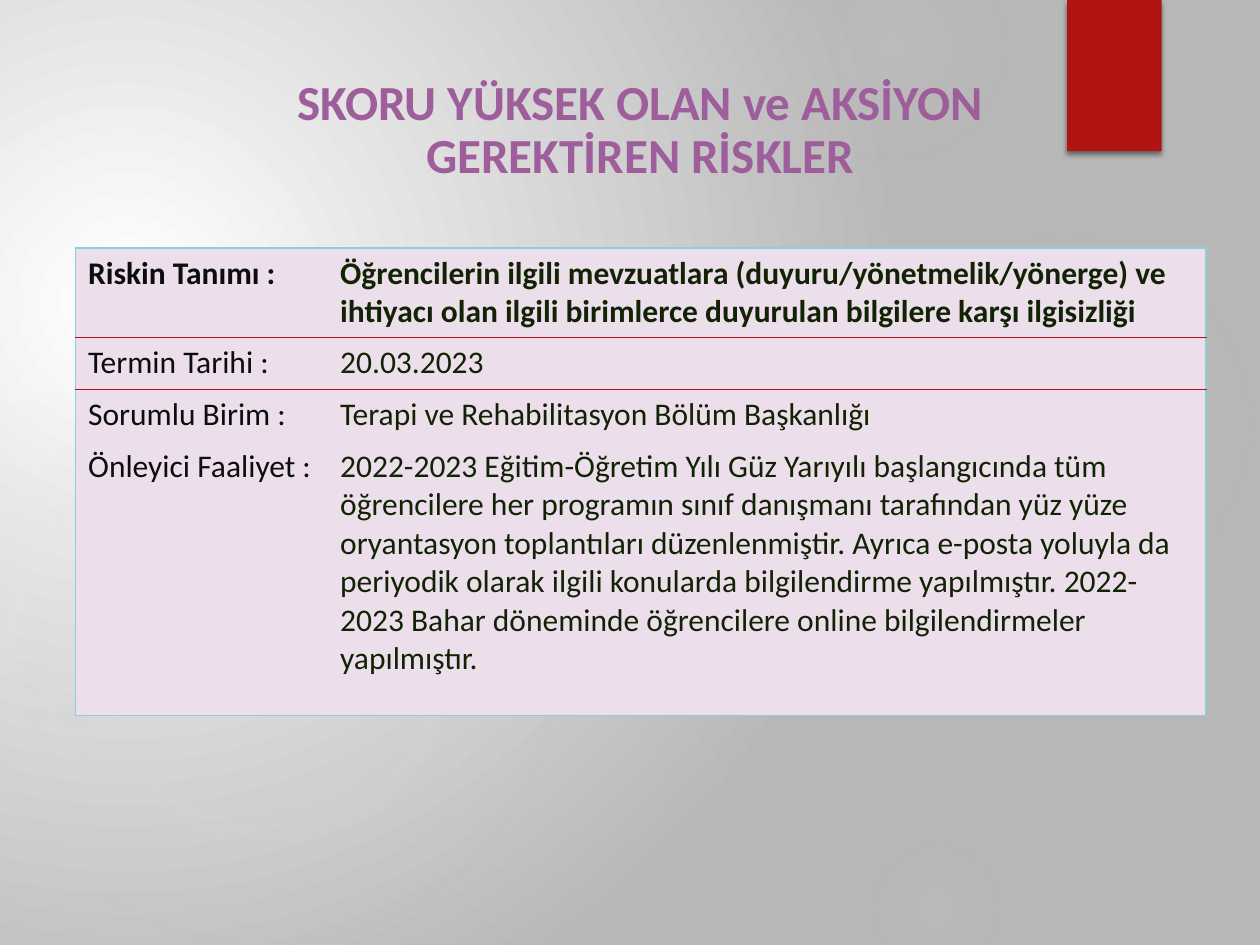
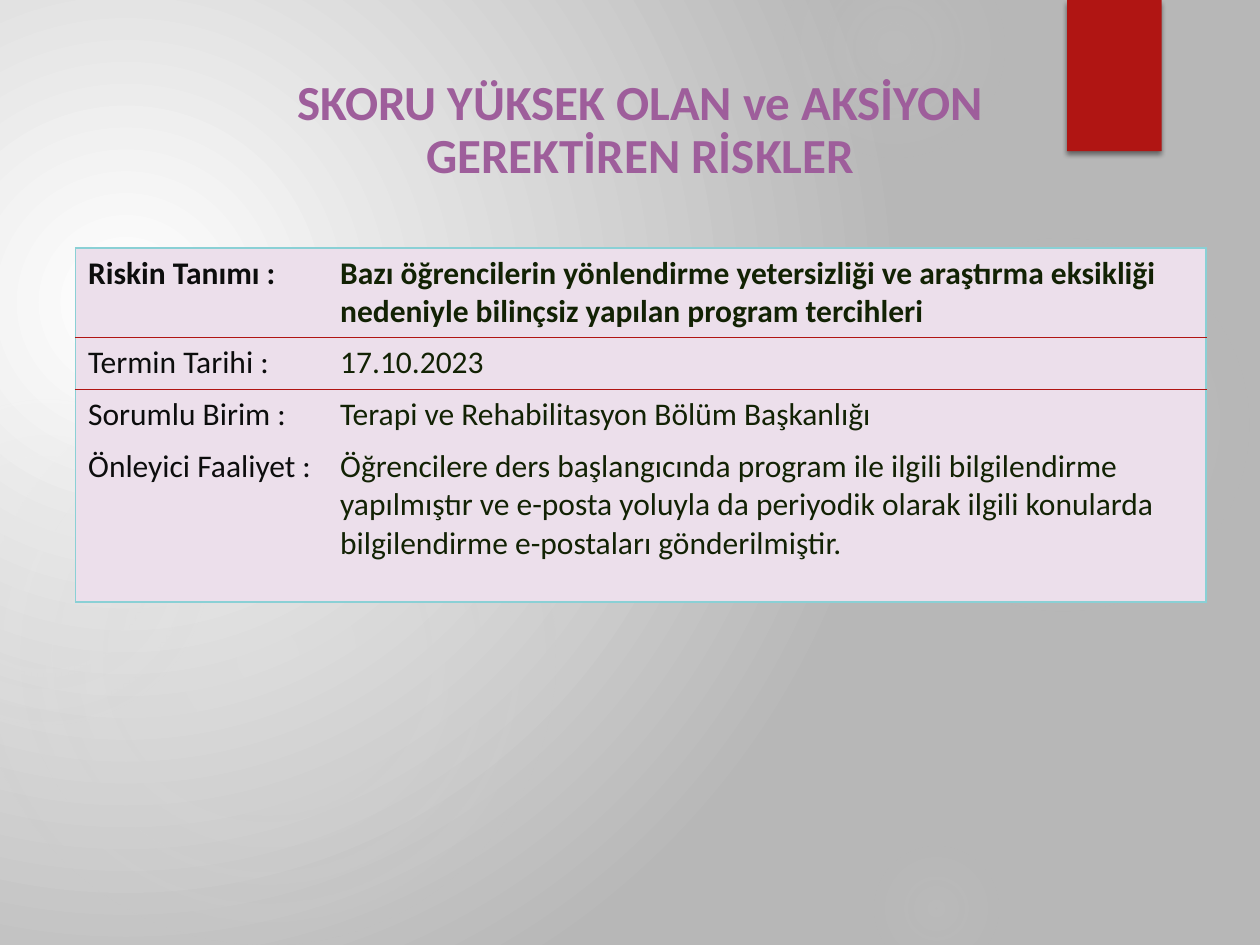
import dataclasses

import lxml.etree
import pptx
import pptx.dml.color
import pptx.enum.shapes
import pptx.enum.text
import pptx.oxml
import pptx.oxml.ns
import pptx.util

EMU_PER_PX = 9144  # 100 px to the inch
FONT = "Calibri"
TITLE = "SKORU YÜKSEK OLAN ve AKSİYON GEREKTİREN RİSKLER"
LABELS = ("Riskin Tanımı :", "Termin Tarihi :", "Sorumlu Birim :", "Önleyici Faaliyet :")
UNIT = "Terapi ve Rehabilitasyon Bölüm Başkanlığı"

GLOW = "D9D9D9"
RED = "B01513"
PURPLE = "9E5E9B"
LILAC = "ECDFEB"
TEAL = "8AD0D5"
LABEL_INK = "0C0D0D"
VALUE_INK = "122204"

TABLE_LEFT, TABLE_TOP = 60, 197
COLUMN_WIDTHS = (200, 697)
HEADER_HEIGHT, ROW_HEIGHT = 71, 41
PLAIN_TABLE_STYLE = "{2D5ABB26-0587-4C30-8999-92F81FD0307C}"


@dataclasses.dataclass(frozen=True)
class Stop:
    position: int
    color: str
    opacity: int = 100


@dataclasses.dataclass(frozen=True)
class Glow:
    left: int
    top: int
    size: int
    core: int
    middle: int
    fade_end: int


@dataclasses.dataclass(frozen=True)
class Risk:
    definition: str
    deadline: str
    unit: str
    action: str
    action_height: int


BACKGROUND = (Stop(0, "FFFFFF"), Stop(100, "B7B7B7"))

GLOWS = (
    Glow(689, 183, 308, 7, 6, 69),
    Glow(622, -50, 175, 14, 7, 73),
    Glow(689, 667, 108, 9, 5, 66),
    Glow(-17, 292, 458, 11, 10, 75),
    Glow(-92, 317, 258, 8, 8, 72),
)

RISKS = (
    Risk(
        "Öğrencilerin ilgili mevzuatlara (duyuru/yönetmelik/yönerge) ve ihtiyacı olan "
        "ilgili birimlerce duyurulan bilgilere karşı ilgisizliği",
        "20.03.2023",
        UNIT,
        "2022-2023 Eğitim-Öğretim Yılı Güz Yarıyılı başlangıcında tüm öğrencilere her "
        "programın sınıf danışmanı tarafından yüz yüze oryantasyon toplantıları "
        "düzenlenmiştir. Ayrıca e-posta yoluyla da periyodik olarak ilgili konularda "
        "bilgilendirme yapılmıştır. 2022-2023 Bahar döneminde öğrencilere online "
        "bilgilendirmeler yapılmıştır.",
        218,
    ),
    Risk(
        "Bazı öğrencilerin yönlendirme yetersizliği ve araştırma eksikliği nedeniyle "
        "bilinçsiz yapılan program tercihleri",
        "17.10.2023",
        UNIT,
        "Öğrencilere ders başlangıcında program ile ilgili bilgilendirme yapılmıştır ve "
        "e-posta yoluyla da periyodik olarak ilgili konularda bilgilendirme e-postaları "
        "gönderilmiştir.",
        128,
    ),
)


def px(length: int) -> pptx.util.Emu:
    return pptx.util.Emu(length * EMU_PER_PX)


def rgb(color: str) -> pptx.dml.color.RGBColor:
    return pptx.dml.color.RGBColor.from_string(color)


def drawing_xml(markup: str) -> lxml.etree._Element:
    """Parse one DrawingML element, declaring the a: prefix on its root."""
    tag, rest = markup.split(" ", 1)
    return pptx.oxml.parse_xml(f"{tag} {pptx.oxml.ns.nsdecls('a')} {rest}")


def write(frame, text: str, *, size: int, color: str, bold: bool = False,
          align=pptx.enum.text.PP_ALIGN.LEFT, line_spacing: float = 1.0,
          space_after: int = 0) -> None:
    frame.word_wrap = True
    para = frame.paragraphs[0]
    para.alignment = align
    para.line_spacing = line_spacing
    para.space_after = pptx.util.Pt(space_after)
    span = para.add_run()
    span.text = text
    span.font.name = FONT
    span.font.size = pptx.util.Pt(size)
    span.font.bold = bold
    span.font.color.rgb = rgb(color)


def fill_radial(holder, fill, stops: tuple[Stop, ...],
                focus: tuple[int, int, int, int]) -> None:
    """Give the holder a circular gradient; focus is left, top, right, bottom in percent."""
    fill.solid()
    stop_markup = "".join(
        f'<a:gs pos="{stop.position * 1000}"><a:srgbClr val="{stop.color}">'
        f'<a:alpha val="{stop.opacity * 1000}"/></a:srgbClr></a:gs>'
        for stop in stops
    )
    left, top, right, bottom = (side * 1000 for side in focus)
    gradient = drawing_xml(
        f'<a:gradFill rotWithShape="1"><a:gsLst>{stop_markup}</a:gsLst>'
        f'<a:path path="circle"><a:fillToRect l="{left}" t="{top}" r="{right}" '
        f'b="{bottom}"/></a:path></a:gradFill>'
    )
    solid = next(holder.element.iter(pptx.oxml.ns.qn("a:solidFill")))
    solid.getparent().replace(solid, gradient)


def add_plain_shape(page, kind, left: int, top: int, width: int, height: int):
    shape = page.shapes.add_shape(kind, px(left), px(top), px(width), px(height))
    shape.shadow.inherit = False
    shape.line.fill.background()
    return shape


def add_glow(page, glow: Glow) -> None:
    oval = add_plain_shape(page, pptx.enum.shapes.MSO_SHAPE.OVAL,
                           glow.left, glow.top, glow.size, glow.size)
    stops = (Stop(0, GLOW, glow.core), Stop(36, GLOW, glow.middle),
             Stop(glow.fade_end, GLOW, 0))
    fill_radial(oval, oval.fill, stops, (50, 50, 50, 50))


def add_ribbon(page) -> None:
    ribbon = add_plain_shape(page, pptx.enum.shapes.MSO_SHAPE.RECTANGLE, 847, 0, 75, 120)
    ribbon.fill.solid()
    ribbon.fill.fore_color.rgb = rgb(RED)
    effects = next(ribbon.element.iter(pptx.oxml.ns.qn("a:effectLst")))
    effects.append(drawing_xml(
        f'<a:outerShdw blurRad="{pptx.util.Pt(3)}" dist="{pptx.util.Pt(2)}" dir="5400000" '
        'algn="ctr" rotWithShape="0"><a:srgbClr val="000000"><a:alpha val="45000"/>'
        '</a:srgbClr></a:outerShdw>'
    ))


def add_title(page) -> None:
    box = page.shapes.add_textbox(px(220), px(58), px(576), px(93))
    box.text_frame.vertical_anchor = pptx.enum.text.MSO_ANCHOR.BOTTOM
    write(box.text_frame, TITLE, size=28, color=PURPLE, bold=True,
          align=pptx.enum.text.PP_ALIGN.CENTER, line_spacing=0.9, space_after=6)


def set_borders(cell, borders: dict[str, str]) -> None:
    """Draw 1 pt borders; keys are sides in the order L, R, T, B."""
    properties = cell._tc.get_or_add_tcPr()
    for index, (side, color) in enumerate(borders.items()):
        properties.insert(index, drawing_xml(
            f'<a:ln{side} w="{pptx.util.Pt(1)}"><a:solidFill><a:srgbClr val="{color}"/>'
            f'</a:solidFill></a:ln{side}>'
        ))


def add_risk_table(page, risk: Risk) -> None:
    values = (risk.definition, risk.deadline, risk.unit, risk.action)
    heights = (HEADER_HEIGHT, ROW_HEIGHT, ROW_HEIGHT, risk.action_height)
    frame = page.shapes.add_table(len(values), len(COLUMN_WIDTHS), px(TABLE_LEFT),
                                  px(TABLE_TOP), px(sum(COLUMN_WIDTHS)), px(sum(heights)))
    next(frame.element.iter(pptx.oxml.ns.qn("a:tableStyleId"))).text = PLAIN_TABLE_STYLE
    table = frame.table
    table.horz_banding = False
    for column, width in zip(table.columns, COLUMN_WIDTHS):
        column.width = px(width)

    last_row = len(values) - 1
    for row_index, (texts, height) in enumerate(zip(zip(LABELS, values), heights)):
        table.rows[row_index].height = px(height)
        is_header = row_index == 0
        for column_index, (text, ink) in enumerate(zip(texts, (LABEL_INK, VALUE_INK))):
            cell = table.cell(row_index, column_index)
            cell.fill.solid()
            cell.fill.fore_color.rgb = rgb(LILAC)
            write(cell.text_frame, text, size=18, color=ink, bold=is_header)
            borders = {"L" if column_index == 0 else "R": TEAL}
            if is_header:
                borders |= {"T": TEAL, "B": RED}
            elif row_index == 1:
                borders["T"] = RED
            elif row_index == last_row:
                borders["B"] = TEAL
            set_borders(cell, borders)


def add_risk_page(deck, risk: Risk) -> None:
    page = deck.slides.add_slide(deck.slide_layouts.get_by_name("Blank"))
    fill_radial(page, page.background.fill, BACKGROUND, (45, 65, 125, 100))
    for glow in GLOWS:
        add_glow(page, glow)
    add_ribbon(page)
    add_title(page)
    add_risk_table(page, risk)


def main() -> None:
    deck = pptx.Presentation()
    deck.slide_width, deck.slide_height = px(1000), px(750)
    for risk in RISKS:
        add_risk_page(deck, risk)
    deck.save("out.pptx")


if __name__ == "__main__":
    main()
